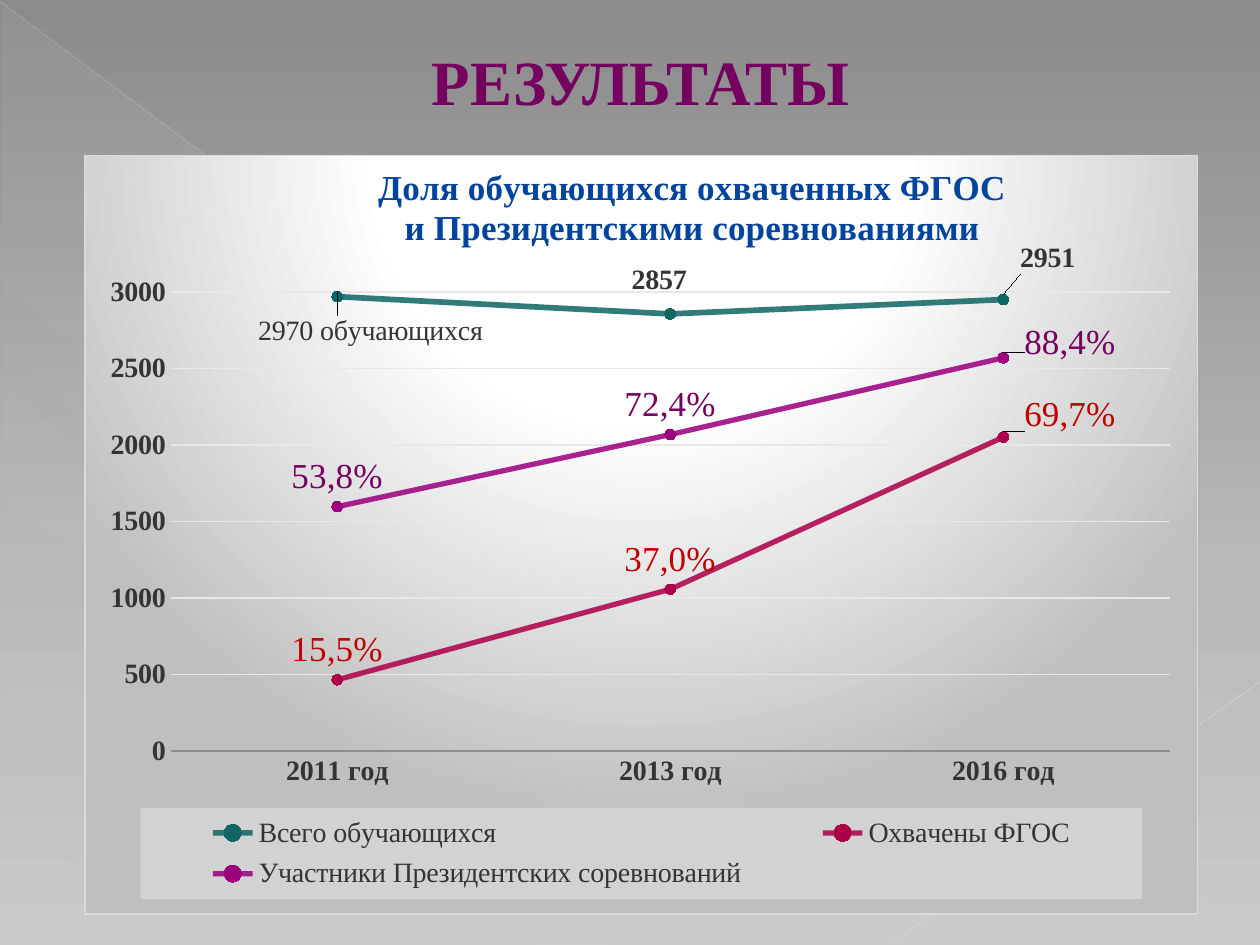
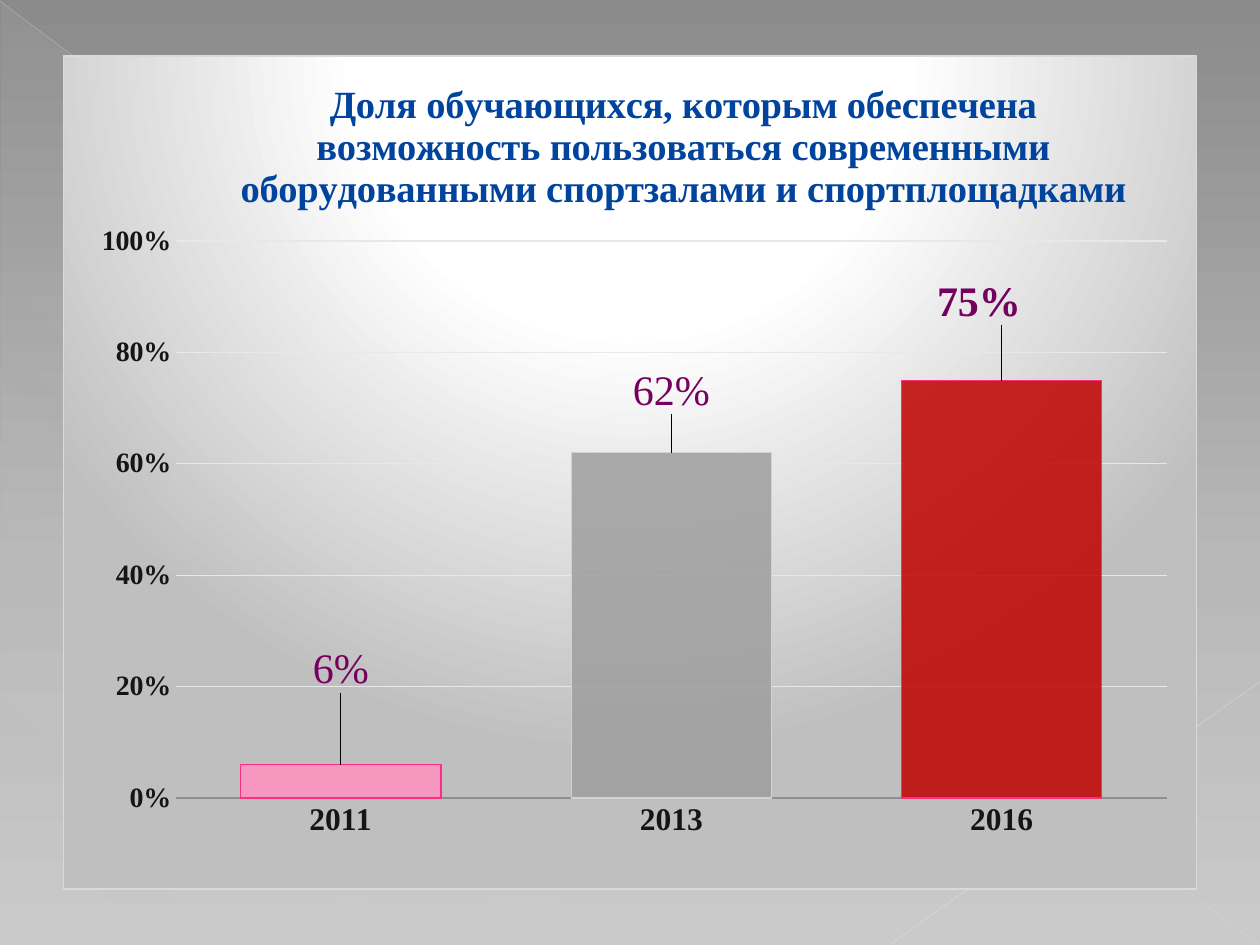
import dataclasses
import typing

import lxml.etree
import pptx
import pptx.chart.chart
import pptx.chart.data
import pptx.dml.color
import pptx.enum.chart
import pptx.enum.shapes
import pptx.enum.text
import pptx.oxml
import pptx.oxml.ns
import pptx.slide
import pptx.util

Inches = pptx.util.Inches
Pt = pptx.util.Pt
qn = pptx.oxml.ns.qn
Element = lxml.etree._Element

# Shared style
SERIF = "Times New Roman"
BASE_FONT = "Quicksand"
PLUM = "75005F"
BLUE = "00449E"
RED = "C00000"
DARK = "343434"
BLACK = "151515"
GRID = "E8E8E8"
AXIS = "8E8E8E"
BORDER = "DADADA"
PALE = "D2D2D2"
CHART_ALPHA = 85


class Stop(typing.NamedTuple):
    position: int
    color: str
    alpha: int = 100


class Ray(typing.NamedTuple):
    start: tuple[float, float]
    end: tuple[float, float]
    color: str
    width: float
    alpha: int


class Label(typing.NamedTuple):
    text: str  # an empty text shows the value itself
    dx: float = 0
    dy: float = 0
    bold: bool = False


@dataclasses.dataclass
class Series:
    name: str
    values: tuple[float, ...]
    color: str
    label_color: str
    label_size: int
    labels: tuple[Label, ...]
    width: float = 3


@dataclasses.dataclass
class ChartPanel:
    kind: pptx.enum.chart.XL_CHART_TYPE
    box: tuple[float, float, float, float]
    title: tuple[str, ...]
    title_size: int
    title_at: tuple[float, float]
    plot_area: tuple[float, float, float, float]
    categories: tuple[str, ...]
    series: tuple[Series, ...]
    text_color: str
    category_size: int
    maximum: float
    step: float
    number_format: str
    label_position: pptx.enum.chart.XL_LABEL_POSITION


BACKDROP = (Stop(0, "8B8B8B"), Stop(60, "B8B8B8"), Stop(100, "CACACA"))
VEIL = (Stop(0, PALE, 10), Stop(70, PALE, 8), Stop(100, PALE, 1))
GLOW = (Stop(0, "FFFFFF"), Stop(39, "FFFFFF"), Stop(100, "BFBFBF"))
RAYS = (
    Ray((0, 0.01), (9.99, 7.49), "DFDFDF", 0.39, 35),
    Ray((10, 5.41), (7.07, 7.49), "E2E2E2", 0.47, 45),
)

PARTICIPATION = ChartPanel(
    pptx.enum.chart.XL_CHART_TYPE.LINE_MARKERS,
    (0.67, 1.23, 8.84, 6.03),
    ("Доля обучающихся охваченных ФГОС", "и Президентскими соревнованиями"),
    20, (0.26, 0.01), (0.077, 0.18, 0.898, 0.605),
    ("2011 год", "2013 год", "2016 год"),
    (
        Series("Всего обучающихся", (2970, 2857, 2951), "106664", DARK, 16,
               (Label("2970 обучающихся", 0.03, 0.08), Label("", -0.01, -0.01, True),
                Label("", 0.04, -0.02, True)), 3.25),
        Series("Охвачены ФГОС", (465, 1057, 2051), "AE0049", RED, 20,
               (Label("15,5%"), Label("37,0%"), Label("69,7%", 0.06, 0.01))),
        Series("Участники Президентских соревнований", (1597, 2068, 2570), "9C007F", PLUM, 20,
               (Label("53,8%"), Label("72,4%"), Label("88,4%", 0.06, 0.02))),
    ),
    DARK, 16, 3000, 500, "General", pptx.enum.chart.XL_LABEL_POSITION.ABOVE,
)
FACILITIES = ChartPanel(
    pptx.enum.chart.XL_CHART_TYPE.COLUMN_CLUSTERED,
    (0.5, 0.44, 9, 6.62),
    ("Доля обучающихся, которым обеспечена возможность пользоваться "
     "современными оборудованными спортзалами и спортплощадками",),
    22, (0.15, 0.02), (0.099, 0.222, 0.875, 0.669),
    ("2011", "2013", "2016"),
    (Series("Series 1", (0.06, 0.62, 0.75), "FF90BE", PLUM, 24,
            (Label("6%", 0, -0.08), Label("62%", 0, -0.04), Label("75%", -0.02, -0.06, True))),),
    BLACK, 18, 1, 0.2, "0%", pptx.enum.chart.XL_LABEL_POSITION.OUTSIDE_END,
)
# Fill and border of each column
COLUMN_COLORS = (("FF90BE", "FF2C84"), ("9E9E9E", PALE), (RED, "FF2C84"))


# Formatting helpers
def rgb(color: str) -> pptx.dml.color.RGBColor:
    return pptx.dml.color.RGBColor.from_string(color)


def style_font(font: typing.Any, size: float, color: str, bold: bool = False, name: str = SERIF) -> None:
    font.name, font.size, font.bold = name, Pt(size), bold
    font.color.rgb = rgb(color)


def style_line(line: typing.Any, color: str, width: float) -> None:
    line.color.rgb = rgb(color)
    line.width = Pt(width)


def paint(fill: typing.Any, color: str) -> None:
    fill.solid()
    fill.fore_color.rgb = rgb(color)


def add_run(para: typing.Any, text: str, size: float, color: str, bold: bool) -> None:
    span = para.add_run()
    span.text = text
    style_font(span.font, size, color, bold)


def fade(colors: typing.Iterable[Element], alpha: int) -> None:
    for color in colors:
        lxml.etree.SubElement(color, qn("a:alpha")).set("val", str(alpha * 1000))


def gradient_xml(stops: tuple[Stop, ...], direction: str) -> str:
    marks = "".join(
        f'<a:gs pos="{stop.position * 1000}"><a:srgbClr val="{stop.color}">'
        f'<a:alpha val="{stop.alpha * 1000}"/></a:srgbClr></a:gs>' for stop in stops)
    return f'<a:gradFill {pptx.oxml.ns.nsdecls("a")}><a:gsLst>{marks}</a:gsLst>{direction}</a:gradFill>'


def set_gradient(fill: typing.Any, owner: Element, stops: tuple[Stop, ...], angle: int) -> None:
    fill.gradient()
    blank = next(owner.iter(qn("a:gradFill")))
    direction = f'<a:lin ang="{angle * 60000}" scaled="0"/>'
    blank.getparent().replace(blank, pptx.oxml.parse_xml(gradient_xml(stops, direction)))


def chart_fill(content: str) -> Element:
    return pptx.oxml.parse_xml(f'<c:spPr {pptx.oxml.ns.nsdecls("c", "a")}>{content}</c:spPr>')


def set_layout(parent: Element, index: int, sizes: tuple[float, ...],
               edge: bool = True, inner: bool = False) -> None:
    """Place a chart part by fractions of the chart."""
    for old in parent.findall(qn("c:layout")):
        parent.remove(old)
    layout = lxml.etree.Element(qn("c:layout"))
    manual = lxml.etree.SubElement(layout, qn("c:manualLayout"))
    entries = [("layoutTarget", "inner")] if inner else []
    entries += [("xMode", "edge"), ("yMode", "edge")] if edge else []
    entries += [(key, str(size)) for key, size in zip("xywh", sizes)]
    for tag, value in entries:
        lxml.etree.SubElement(manual, qn(f"c:{tag}")).set("val", value)
    parent.insert(index, layout)


# Slide parts
def add_backdrop(page: pptx.slide.Slide) -> None:
    veil = page.shapes.add_shape(pptx.enum.shapes.MSO_SHAPE.RIGHT_TRIANGLE,
                                 Inches(0.01), Inches(0.02), Inches(9.99), Inches(7.48))
    veil.shadow.inherit = False
    set_gradient(veil.fill, veil.element, VEIL, 133)
    veil.line.fill.background()
    for ray in RAYS:
        line = page.shapes.add_connector(pptx.enum.shapes.MSO_CONNECTOR.STRAIGHT,
                                         *map(Inches, ray.start + ray.end))
        style_line(line.line, ray.color, ray.width)
        fade(line.element.iter(qn("a:srgbClr")), ray.alpha)
        lxml.etree.SubElement(line.element.spPr, qn("a:effectLst"))


def add_title(page: pptx.slide.Slide, text: str) -> None:
    title = page.shapes.title
    title.left, title.top, title.width, title.height = map(Inches, (3, 0.29, 4.17, 0.71))
    frame = title.text_frame
    frame.word_wrap = True
    frame.auto_size = pptx.enum.text.MSO_AUTO_SIZE.SHAPE_TO_FIT_TEXT
    frame.vertical_anchor = pptx.enum.text.MSO_ANCHOR.TOP
    para = frame.paragraphs[0]
    para.alignment = pptx.enum.text.PP_ALIGN.CENTER
    add_run(para, text, 36, PLUM, True)
    title.element.getparent().append(title.element)


def style_axes(chart: pptx.chart.chart.Chart, panel: ChartPanel) -> None:
    for axis, size in ((chart.category_axis, panel.category_size), (chart.value_axis, 16)):
        axis.major_tick_mark = axis.minor_tick_mark = pptx.enum.chart.XL_TICK_MARK.NONE
        style_font(axis.tick_labels.font, size, panel.text_color, True)
    style_line(chart.category_axis.format.line, AXIS, 1.5)
    values = chart.value_axis
    values.minimum_scale, values.maximum_scale, values.major_unit = 0, panel.maximum, panel.step
    values.format.line.fill.background()
    values.has_major_gridlines = True
    style_line(values.major_gridlines.format.line, GRID, 0.75)
    values.tick_labels.number_format = panel.number_format
    values.tick_labels.number_format_is_linked = False


def add_labels(chart: pptx.chart.chart.Chart, panel: ChartPanel) -> None:
    for series, item in zip(chart.plots[0].series, panel.series):
        labels = series.data_labels
        labels.show_value = True
        labels.position = panel.label_position
        style_font(labels.font, item.label_size, item.label_color, True)
        for index, label in enumerate(item.labels):
            tag = series.points[index].data_label
            if label.text:
                add_run(tag.text_frame.paragraphs[0], label.text,
                        item.label_size, item.label_color, label.bold)
            else:
                style_font(tag.font, item.label_size, item.label_color, label.bold)
            tag.position = panel.label_position
    shifts = [label for item in panel.series for label in item.labels]
    for tag, label in zip(chart.element.iter(qn("c:dLbl")), shifts):
        if label.dx or label.dy:
            set_layout(tag, 1, (label.dx, label.dy), edge=False)


def add_chart(page: pptx.slide.Slide, panel: ChartPanel) -> pptx.chart.chart.Chart:
    data = pptx.chart.data.CategoryChartData(number_format=panel.number_format)
    data.categories = panel.categories
    for item in panel.series:
        data.add_series(item.name, item.values)
    chart = page.shapes.add_chart(panel.kind, *map(Inches, panel.box), data).chart
    style_font(chart.font, 10, "FFFFFF", name=BASE_FONT)
    chart.has_legend = False
    chart.plots[0].vary_by_categories = False

    # Panel fill and border
    glow = gradient_xml(GLOW, '<a:path path="circle"><a:fillToRect l="50000" t="-80000" '
                              'r="50000" b="180000"/></a:path>')
    border = f'<a:ln w="{Pt(0.75)}"><a:solidFill><a:srgbClr val="{BORDER}"/></a:solidFill></a:ln>'
    chart.element.find(qn("c:chart")).addnext(chart_fill(glow + border))

    # Chart title
    frame = chart.chart_title.text_frame
    for index, text in enumerate(panel.title):
        para = frame.add_paragraph() if index else frame.paragraphs[0]
        add_run(para, text, panel.title_size, BLUE, True)
    set_layout(next(chart.element.iter(qn("c:title"))), 1, panel.title_at)
    set_layout(next(chart.element.iter(qn("c:plotArea"))), 0, panel.plot_area, inner=True)
    style_axes(chart, panel)
    add_labels(chart, panel)
    return chart


def style_lines(chart: pptx.chart.chart.Chart, panel: ChartPanel) -> None:
    for series, item in zip(chart.plots[0].series, panel.series):
        series.smooth = False
        style_line(series.format.line, item.color, item.width)
        series.marker.style = pptx.enum.chart.XL_MARKER_STYLE.CIRCLE
        series.marker.size = 6
        paint(series.marker.format.fill, item.color)
        series.marker.format.line.fill.background()
    for element in chart.element.iter(qn("c:ser")):
        fade(element.find(qn("c:spPr")).iter(qn("a:srgbClr")), CHART_ALPHA)


def add_legend(chart: pptx.chart.chart.Chart) -> None:
    chart.has_legend = True
    chart.legend.position = pptx.enum.chart.XL_LEGEND_POSITION.BOTTOM
    chart.legend.include_in_layout = False
    style_font(chart.legend.font, 16, DARK)
    legend = next(chart.element.iter(qn("c:legend")))
    set_layout(legend, 1, (0.05, 0.86, 0.9, 0.12))
    legend.find(qn("c:overlay")).addnext(
        chart_fill(f'<a:solidFill><a:srgbClr val="{PALE}"/></a:solidFill>'))


def style_columns(chart: pptx.chart.chart.Chart) -> None:
    chart.plots[0].gap_width = 65
    series = chart.plots[0].series[0]
    series.invert_if_negative = False
    for index, (color, edge) in enumerate(COLUMN_COLORS):
        column = series.points[index].format
        paint(column.fill, color)
        style_line(column.line, edge, 0.75)
    for point in chart.element.iter(qn("c:dPt")):
        fade(point.find(qn("c:spPr")).find(qn("a:solidFill")), CHART_ALPHA)


def main() -> None:
    deck = pptx.Presentation()
    deck.slide_width, deck.slide_height = Inches(10), Inches(7.5)
    master = deck.slide_master
    set_gradient(master.background.fill, master.element, BACKDROP, 90)
    title_only, blank = deck.slide_layouts[5], deck.slide_layouts[6]

    # Results
    page = deck.slides.add_slide(title_only)
    add_backdrop(page)
    chart = add_chart(page, PARTICIPATION)
    style_lines(chart, PARTICIPATION)
    add_legend(chart)
    add_title(page, "РЕЗУЛЬТАТЫ")

    # Sports facilities
    page = deck.slides.add_slide(blank)
    add_backdrop(page)
    style_columns(add_chart(page, FACILITIES))

    deck.save("out.pptx")


if __name__ == "__main__":
    main()
